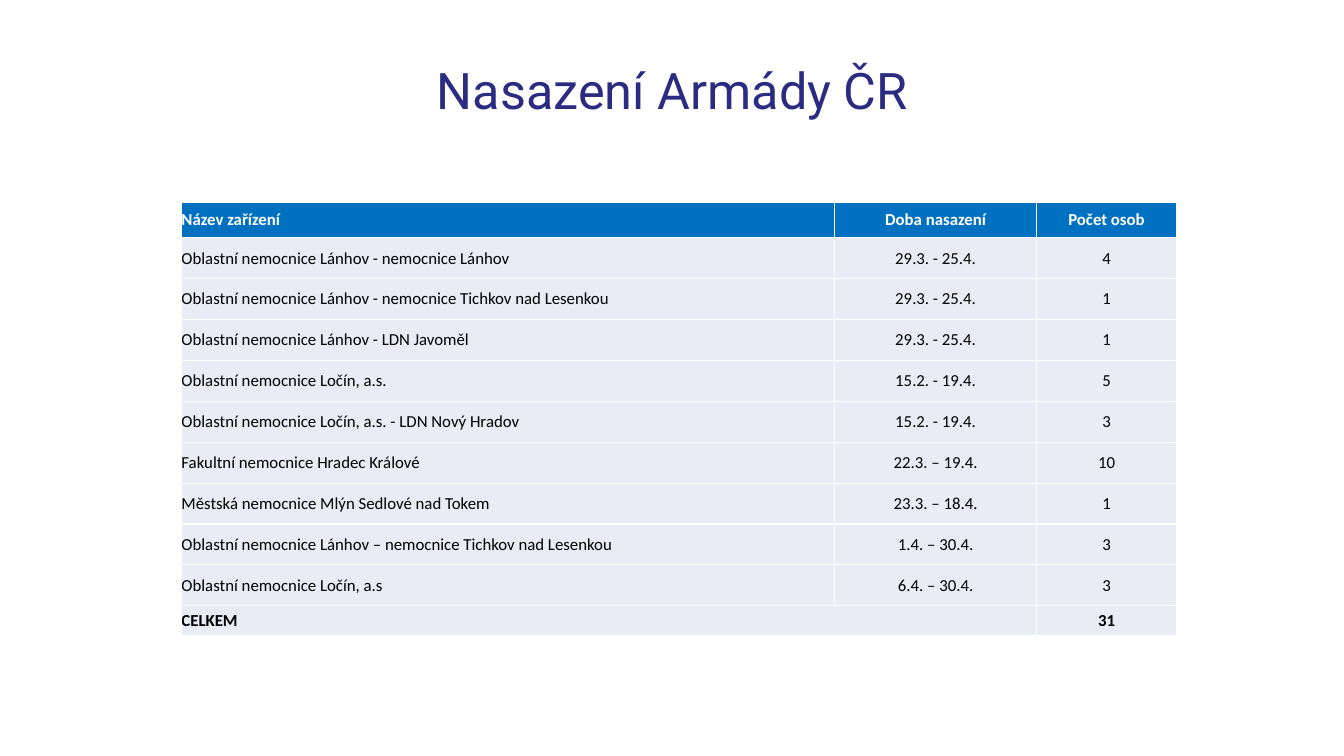
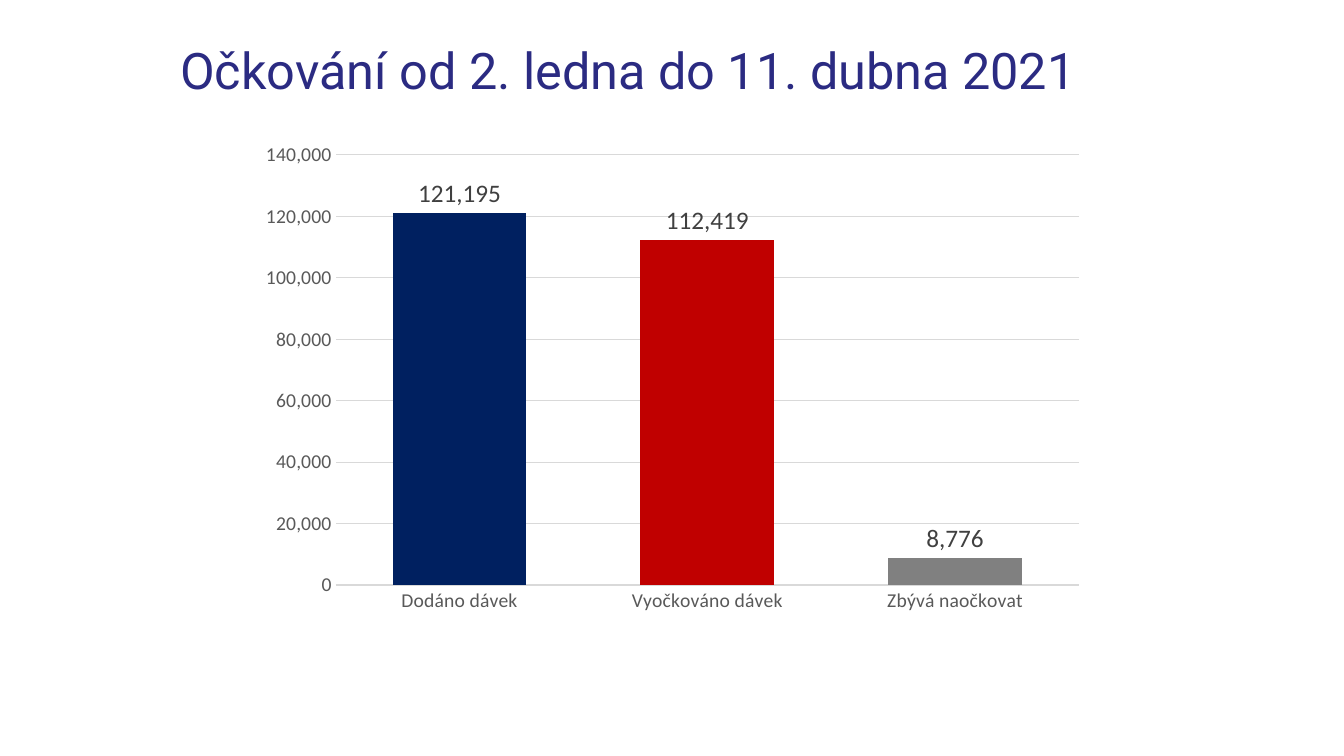
import lxml.etree
import pptx
import pptx.chart.data
import pptx.dml.color
import pptx.enum.chart
import pptx.enum.text
import pptx.oxml.ns
import pptx.util

Inches = pptx.util.Inches
Pt = pptx.util.Pt
Align = pptx.enum.text.PP_ALIGN
Anchor = pptx.enum.text.MSO_ANCHOR
qn = pptx.oxml.ns.qn


def color(code):
    return pptx.dml.color.RGBColor.from_string(code)


class Deck:
    head = "Roboto"
    body = "Calibri"
    navy = "2B2B82"
    blue = "0070C0"
    pale = "E9EBF5"
    white = "FFFFFF"
    black = "000000"
    grid = "D9D9D9"
    gray = "595959"
    dark = "404040"

    def __init__(self):
        self.file = pptx.Presentation()
        self.file.slide_width = Inches(13.33)
        self.file.slide_height = Inches(7.5)
        self.slide = None

    def page(self):
        self.slide = self.file.slides.add_slide(self.file.slide_layouts[6])

    def style(self, font, size, code, name=None, bold=False):
        font.name = name or self.body
        font.size = Pt(size)
        font.bold = bold
        font.color.rgb = color(code)

    def title(self, text, left, top, width, height, align=Align.LEFT):
        box = self.slide.shapes.add_textbox(
            Inches(left), Inches(top), Inches(width), Inches(height))
        frame = box.text_frame
        frame.word_wrap = True
        frame.vertical_anchor = Anchor.MIDDLE
        para = frame.paragraphs[0]
        para.alignment = align
        para.line_spacing = 0.9
        run = para.add_run()
        run.text = text
        self.style(run.font, 36, self.navy, self.head)

    def border(self, cell):
        props = cell._tc.get_or_add_tcPr()
        for spot, side in enumerate(("lnL", "lnR", "lnT", "lnB")):
            line = lxml.etree.Element(qn(f"a:{side}"), w=str(Pt(1)))
            fill = lxml.etree.SubElement(line, qn("a:solidFill"))
            lxml.etree.SubElement(fill, qn("a:srgbClr"), val=self.white)
            props.insert(spot, line)

    def cell(self, cell, text, align, fill, code, bold):
        cell.margin_left = cell.margin_right = 0
        cell.margin_top = cell.margin_bottom = 0
        cell.vertical_anchor = Anchor.MIDDLE
        cell.fill.solid()
        cell.fill.fore_color.rgb = color(fill)
        self.border(cell)
        if text:
            para = cell.text_frame.paragraphs[0]
            para.alignment = align
            run = para.add_run()
            run.text = text
            self.style(run.font, 12, code, bold=bold)

    def table(self, rows, widths, left, top, height, first, last):
        count = len(rows)
        table = self.slide.shapes.add_table(
            count, len(widths), Inches(left), Inches(top),
            Inches(sum(widths)), Inches(height)).table
        for col, width in zip(table.columns, widths):
            col.width = Inches(width)
        inner = (height - first - last) / (count - 2)
        sizes = [first] + [inner] * (count - 2) + [last]
        for r, (row, size) in enumerate(zip(rows, sizes)):
            table.rows[r].height = Inches(size)
            fill, code = (self.pale, self.black) if r else (self.blue, self.white)
            for c, text in enumerate(row):
                align = Align.CENTER if c else Align.LEFT
                self.cell(table.cell(r, c), text, align, fill, code,
                          r in (0, count - 1))
        table.cell(count - 1, 0).merge(table.cell(count - 1, 1))

    def chart(self, name, bars, left, top, width, height):
        data = pptx.chart.data.CategoryChartData(number_format="#,##0")
        data.categories = [label for label, value, fill in bars]
        data.add_series(name, [value for label, value, fill in bars])
        chart = self.slide.shapes.add_chart(
            pptx.enum.chart.XL_CHART_TYPE.COLUMN_CLUSTERED, Inches(left),
            Inches(top), Inches(width), Inches(height), data).chart
        chart.has_legend = False
        chart.has_title = False
        self.style(chart.font, 10, self.black)
        for axis in (chart.category_axis, chart.value_axis):
            axis.major_tick_mark = pptx.enum.chart.XL_TICK_MARK.NONE
            axis.minor_tick_mark = pptx.enum.chart.XL_TICK_MARK.NONE
            self.style(axis.tick_labels.font, 14, self.gray)
        base = chart.category_axis.format.line
        base.color.rgb = color(self.grid)
        base.width = Pt(1)
        scale = chart.value_axis
        scale.minimum_scale = 0
        scale.maximum_scale = 140000
        scale.major_unit = 20000
        scale.format.line.fill.background()
        scale.tick_labels.number_format = "#,##0"
        scale.tick_labels.number_format_is_linked = False
        lines = scale.major_gridlines.format.line
        lines.color.rgb = color(self.grid)
        lines.width = Pt(0.75)
        plot = chart.plots[0]
        plot.vary_by_categories = False
        plot.gap_width = 85
        plot.overlap = -24
        series = plot.series[0]
        for i, (label, value, fill) in enumerate(bars):
            paint = series.points[i].format.fill
            paint.solid()
            paint.fore_color.rgb = color(fill)
        labels = series.data_labels
        labels.show_value = True
        labels.position = pptx.enum.chart.XL_LABEL_POSITION.OUTSIDE_END
        labels.number_format = "#,##0"
        labels.number_format_is_linked = False
        self.style(labels.font, 18, self.dark)


def main():
    deck = Deck()

    deck.page()
    deck.title("Nasazení Armády ČR", 0.92, 0.4, 11.5, 1.04, Align.CENTER)
    staff = [
        ("Název zařízení", "Doba nasazení", "Počet osob"),
        ("Oblastní nemocnice Lánhov - nemocnice Lánhov", "29.3. - 25.4.", "4"),
        ("Oblastní nemocnice Lánhov - nemocnice Tichkov nad Lesenkou",
         "29.3. - 25.4.", "1"),
        ("Oblastní nemocnice Lánhov - LDN Javoměl", "29.3. - 25.4.", "1"),
        ("Oblastní nemocnice Ločín, a.s.", "15.2. - 19.4.", "5"),
        ("Oblastní nemocnice Ločín, a.s. - LDN Nový Hradov",
         "15.2. - 19.4.", "3"),
        ("Fakultní nemocnice Hradec Králové", "22.3. – 19.4.", "10"),
        ("Městská nemocnice Mlýn Sedlové nad Tokem", "23.3. – 18.4.", "1"),
        ("Oblastní nemocnice Lánhov – nemocnice Tichkov nad Lesenkou",
         "1.4. – 30.4.", "3"),
        ("Oblastní nemocnice Ločín, a.s", "6.4. – 30.4.", "3"),
        ("CELKEM", "", "31"),
    ]
    deck.table(staff, (6.48, 2, 1.39), 1.8, 2.01, 4.3, 0.35, 0.3)

    deck.page()
    deck.title("Očkování od 2. ledna do 11. dubna 2021", 1.69, 0.19, 10.58, 1.07)
    doses = [
        ("Dodáno dávek", 121195, "002060"),
        ("Vyočkováno dávek", 112419, "C00000"),
        ("Zbývá naočkovat", 8776, "808080"),
    ]
    deck.chart("Dávky", doses, 2.47, 1.32, 8.4, 4.86)

    deck.file.save("out.pptx")


if __name__ == "__main__":
    main()
